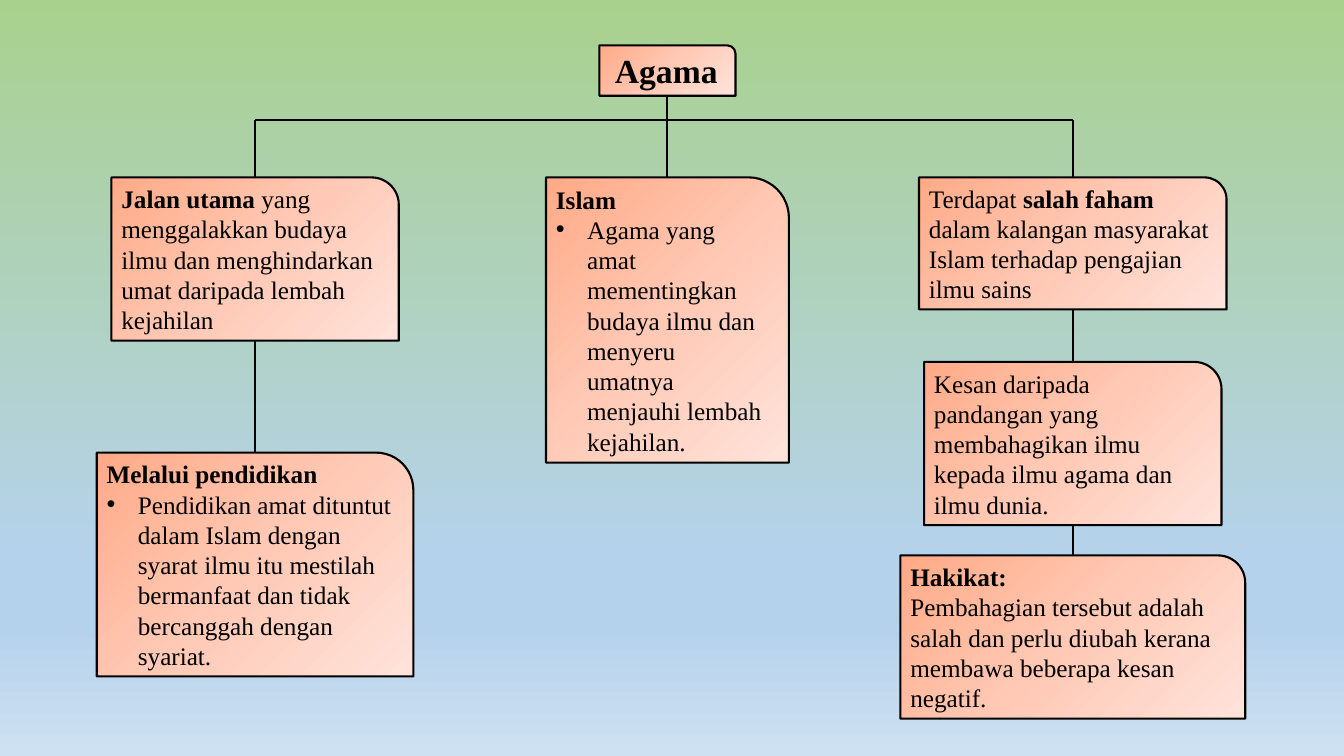
"""Build a tree diagram slide about Agama with three branches of text boxes."""
from lxml import etree
from pptx import Presentation
from pptx.dml.color import RGBColor
from pptx.enum.shapes import MSO_CONNECTOR, MSO_SHAPE
from pptx.enum.text import MSO_ANCHOR, PP_ALIGN
from pptx.oxml.ns import qn
from pptx.util import Inches, Pt

ROUNDED_CORNER = MSO_SHAPE.ROUND_1_RECTANGLE
STRAIGHT = MSO_CONNECTOR.STRAIGHT
MIDDLE = MSO_ANCHOR.MIDDLE
LEFT, CENTER = PP_ALIGN.LEFT, PP_ALIGN.CENTER

THEME = {
    "font": "Times New Roman",
    "ink": RGBColor.from_string("000000"),
    "title_size": Pt(24),
    "body_size": Pt(18),
    "line_width": Pt(1.5),
    "background": [(0, "A9D18E"), (74, "B5D2EC"), (83, "B5D2EC"), (100, "CEE1F2")],
    "box": [(0, "FFAA87"), (50, "FFC9B5"), (100, "FFE3DB")],
}
BULLET_INDENT = Inches(0.31)
ROOT_BOTTOM, BRANCH_Y = 0.95, 1.19

ROOT = {
    "top": 0.45, "width": 1.35, "height": 0.5, "align": CENTER, "size": THEME["title_size"],
    "paragraphs": [{"runs": [("Agama", True)]}],
}
COLUMNS = [
    {"center": 2.53, "start": BRANCH_Y, "boxes": [
        {"top": 1.76, "width": 2.85, "height": 1.62, "paragraphs": [
            {"runs": [("Jalan utama ", True),
                      ("yang menggalakkan budaya ilmu dan menghindarkan umat "
                       "daripada lembah kejahilan", False)]}]},
        {"top": 4.49, "width": 3.14, "height": 2.22, "paragraphs": [
            {"runs": [("Melalui pendidikan", True)]},
            {"bullet": True, "runs": [
                ("Pendidikan amat dituntut dalam Islam dengan syarat ilmu itu mestilah "
                 "bermanfaat dan tidak bercanggah dengan syariat.", False)]}]},
    ]},
    {"center": 6.62, "start": ROOT_BOTTOM, "boxes": [
        ROOT,
        {"top": 1.76, "width": 2.41, "height": 2.83, "paragraphs": [
            {"runs": [("Islam", True)]},
            {"bullet": True, "runs": [
                ("Agama yang amat mementingkan budaya ilmu dan menyeru umatnya "
                 "menjauhi lembah kejahilan.", False)]}]},
    ]},
    {"center": 10.64, "start": BRANCH_Y, "boxes": [
        {"top": 1.76, "width": 3.05, "height": 1.31, "paragraphs": [
            {"runs": [("Terdapat ", False), ("salah faham ", True),
                      ("dalam kalangan masyarakat Islam terhadap pengajian ilmu sains",
                       False)]}]},
        {"top": 3.59, "width": 2.95, "height": 1.62, "paragraphs": [
            {"runs": [("Kesan daripada pandangan yang membahagikan ilmu kepada ilmu agama "
                       "dan ilmu dunia.", False)]}]},
        {"top": 5.51, "width": 3.42, "height": 1.62, "paragraphs": [
            {"runs": [("Hakikat:", True)]},
            {"runs": [("Pembahagian tersebut adalah salah dan perlu diubah kerana membawa "
                       "beberapa kesan negatif.", False)]}]},
    ]},
]


def paint_gradient(fill, element, stops, angle):
    """Fill with a linear gradient whose angle runs clockwise."""
    fill.gradient()
    fill.gradient_angle = 360 - angle
    stop_list = element.find(".//" + qn("a:gsLst"))
    for old_stop in list(stop_list):
        stop_list.remove(old_stop)
    for position, color in stops:
        stop = etree.SubElement(stop_list, qn("a:gs"), pos=str(position * 1000))
        etree.SubElement(stop, qn("a:srgbClr"), val=color)


def connect(slide, start, end):
    """Draw a plain straight line between two points in inches."""
    points = [Inches(value) for value in (*start, *end)]
    connector = slide.shapes.add_connector(STRAIGHT, *points)
    connector.line.color.rgb = THEME["ink"]
    connector.line.width = THEME["line_width"]
    etree.SubElement(connector.element.spPr, qn("a:effectLst"))


presentation = Presentation()
presentation.slide_width = Inches(13.33)
presentation.slide_height = Inches(7.5)
slide = presentation.slides.add_slide(presentation.slide_layouts[6])
paint_gradient(slide.background.fill, slide.element, THEME["background"], 90)

connect(slide, (COLUMNS[0]["center"], BRANCH_Y), (COLUMNS[-1]["center"], BRANCH_Y))

for column in COLUMNS:
    center, line_start = column["center"], column["start"]
    for box in column["boxes"]:
        top, width, height = box["top"], box["width"], box["height"]
        if top > line_start:
            connect(slide, (center, line_start), (center, top))
        line_start = top + height

        shape = slide.shapes.add_shape(
            ROUNDED_CORNER, Inches(center - width / 2), Inches(top),
            Inches(width), Inches(height))
        shape.shadow.inherit = False
        paint_gradient(shape.fill, shape.element, THEME["box"], 45)
        shape.line.color.rgb = THEME["ink"]
        shape.line.width = THEME["line_width"]
        frame = shape.text_frame
        frame.word_wrap = True
        frame.vertical_anchor = MIDDLE

        for index, content in enumerate(box["paragraphs"]):
            paragraph = frame.add_paragraph() if index else frame.paragraphs[0]
            paragraph.alignment = box.get("align", LEFT)
            if content.get("bullet"):
                properties = paragraph._p.get_or_add_pPr()
                properties.set("marL", str(int(BULLET_INDENT)))
                properties.set("indent", str(-int(BULLET_INDENT)))
                etree.SubElement(properties, qn("a:buFont"), typeface="Arial")
                etree.SubElement(properties, qn("a:buChar"), char="•")
            for text, bold in content["runs"]:
                run = paragraph.add_run()
                run.text = text
                run.font.color.rgb = THEME["ink"]
                font_format = {"name": THEME["font"], "bold": bold,
                               "size": box.get("size", THEME["body_size"])}
                for name, value in font_format.items():
                    setattr(run.font, name, value)

presentation.save("out.pptx")
